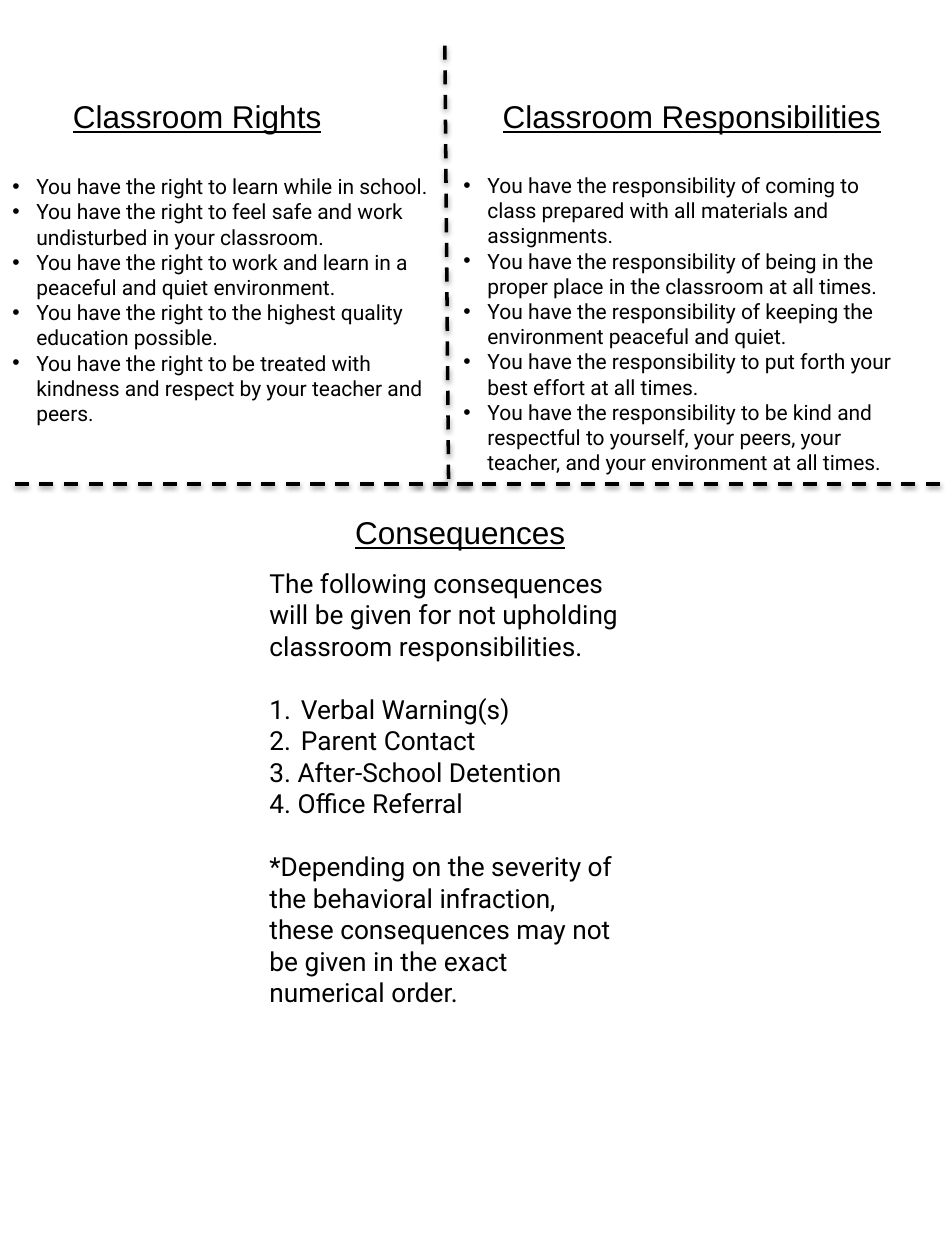
from lxml import etree
from pptx import Presentation
from pptx.dml.color import RGBColor
from pptx.enum.dml import MSO_LINE
from pptx.enum.shapes import MSO_CONNECTOR
from pptx.enum.text import MSO_AUTO_SIZE
from pptx.oxml.ns import qn
from pptx.util import Inches, Pt

DASH = MSO_LINE.DASH
STRAIGHT = MSO_CONNECTOR.STRAIGHT
FIT = MSO_AUTO_SIZE.SHAPE_TO_FIT_TEXT

RIGHTS = [
    "You have the right to learn while in school.",
    "You have the right to feel safe and work undisturbed in your classroom.",
    "You have the right to work and learn in a peaceful and quiet environment.",
    "You have the right to the highest quality education possible.",
    "You have the right to be treated with kindness and respect by your teacher and peers.",
]
RESPONSIBILITIES = [
    "You have the responsibility of coming to class prepared with all materials and assignments.",
    "You have the responsibility of being in the proper place in the classroom at all times.",
    "You have the responsibility of keeping the environment peaceful and quiet.",
    "You have the responsibility to put forth your best effort at all times.",
    "You have the responsibility to be kind and respectful to yourself, your peers, "
    "your teacher, and your environment at all times.",
]


def color(value):
    return RGBColor.from_string(value)


def add_paragraph(tf, text, size=12, font="Roboto", ink="000000", underline=None,
                  bullet=None, number=False, indent=0, before=0):
    first = tf.paragraphs[0]
    p = tf.add_paragraph() if first.runs else first
    pPr = p._p.get_or_add_pPr()
    if indent:
        pPr.set("marL", str(Inches(indent)))
        pPr.set("indent", str(-Inches(indent)))
    if bullet:
        etree.SubElement(pPr, qn("a:buFont"), typeface="Arial")
        etree.SubElement(pPr, qn("a:buChar"), char=bullet)
    if number:
        etree.SubElement(pPr, qn("a:buFont"), typeface="+mj-lt")
        etree.SubElement(pPr, qn("a:buAutoNum"), type="arabicPeriod")
    if before:
        p.space_before = Pt(before)
    r = p.add_run()
    r.text = text
    r.font.name = font
    r.font.size = Pt(size)
    r.font.underline = underline
    r.font.color.rgb = color(ink)


class Handout:
    ink = "000000"
    heading_font = "Arial"

    def __init__(self, slide):
        self.slide = slide

    def text_box(self, x, y, w, h, wrap=True):
        sp = self.slide.shapes.add_textbox(Inches(x), Inches(y), Inches(w), Inches(h))
        tf = sp.text_frame
        tf.word_wrap = wrap
        tf.auto_size = FIT
        return tf

    def heading(self, text, x, y, w, wrap=True):
        tf = self.text_box(x, y, w, 0.4, wrap)
        add_paragraph(tf, text, size=18, font=self.heading_font, ink=self.ink, underline=True)

    def bullets(self, items, x, y, w, h):
        tf = self.text_box(x, y, w, h)
        for item in items:
            add_paragraph(tf, item, ink=self.ink, bullet="•", indent=0.19)

    def divider(self, x1, y1, x2, y2):
        line = self.slide.shapes.add_connector(
            STRAIGHT, Inches(x1), Inches(y1), Inches(x2), Inches(y2))
        line.line.color.rgb = color(self.ink)
        line.line.width = Pt(2)
        line.line.dash_style = DASH
        # Soft shadow straight below the line
        effects = etree.SubElement(line._element.spPr, qn("a:effectLst"))
        shadow = etree.SubElement(effects, qn("a:outerShdw"), blurRad=str(Pt(3.1)),
                                  dist=str(Pt(1.6)), dir="5400000", rotWithShape="0")
        tint = etree.SubElement(shadow, qn("a:srgbClr"), val=self.ink)
        etree.SubElement(tint, qn("a:alpha"), val="38000")


def main():
    prs = Presentation()
    prs.slide_width, prs.slide_height = Inches(7.5), Inches(10)
    s = Handout(prs.slides.add_slide(prs.slide_layouts[6]))

    # Rights and responsibilities
    s.heading("Classroom Rights", 0.48, 0.72, 2.6)
    s.heading("Classroom Responsibilities", 3.89, 0.72, 3.32, wrap=False)
    s.bullets(RIGHTS, 0, 1.33, 3.53, 2.73)
    s.bullets(RESPONSIBILITIES, 3.58, 1.32, 3.74, 2.93)

    # Dashed dividers
    s.divider(7.46, 3.84, 3.31, 3.84)
    s.divider(3.56, 3.8, 3.53, 0.3)
    s.divider(3.75, 3.84, 0.05, 3.84)

    # Consequences
    s.heading("Consequences", 2.72, 4.02, 3.78)
    tf = s.text_box(2.04, 4.45, 2.98, 3.38)
    numbered = {"number": True, "indent": 0.25}
    gap = {"before": 18}
    for text, style in [
        ("The following consequences will be given for not upholding "
         "classroom responsibilities.", {}),
        ("Verbal Warning(s)", numbered | gap),
        ("Parent Contact", numbered),
        ("3. After-School Detention", {}),
        ("4. Office Referral", {}),
        ("*Depending on the severity of the behavioral infraction, these consequences "
         "may not be given in the exact numerical order.", gap),
    ]:
        add_paragraph(tf, text, size=15, ink=s.ink, **style)

    prs.save("out.pptx")


if __name__ == "__main__":
    main()
